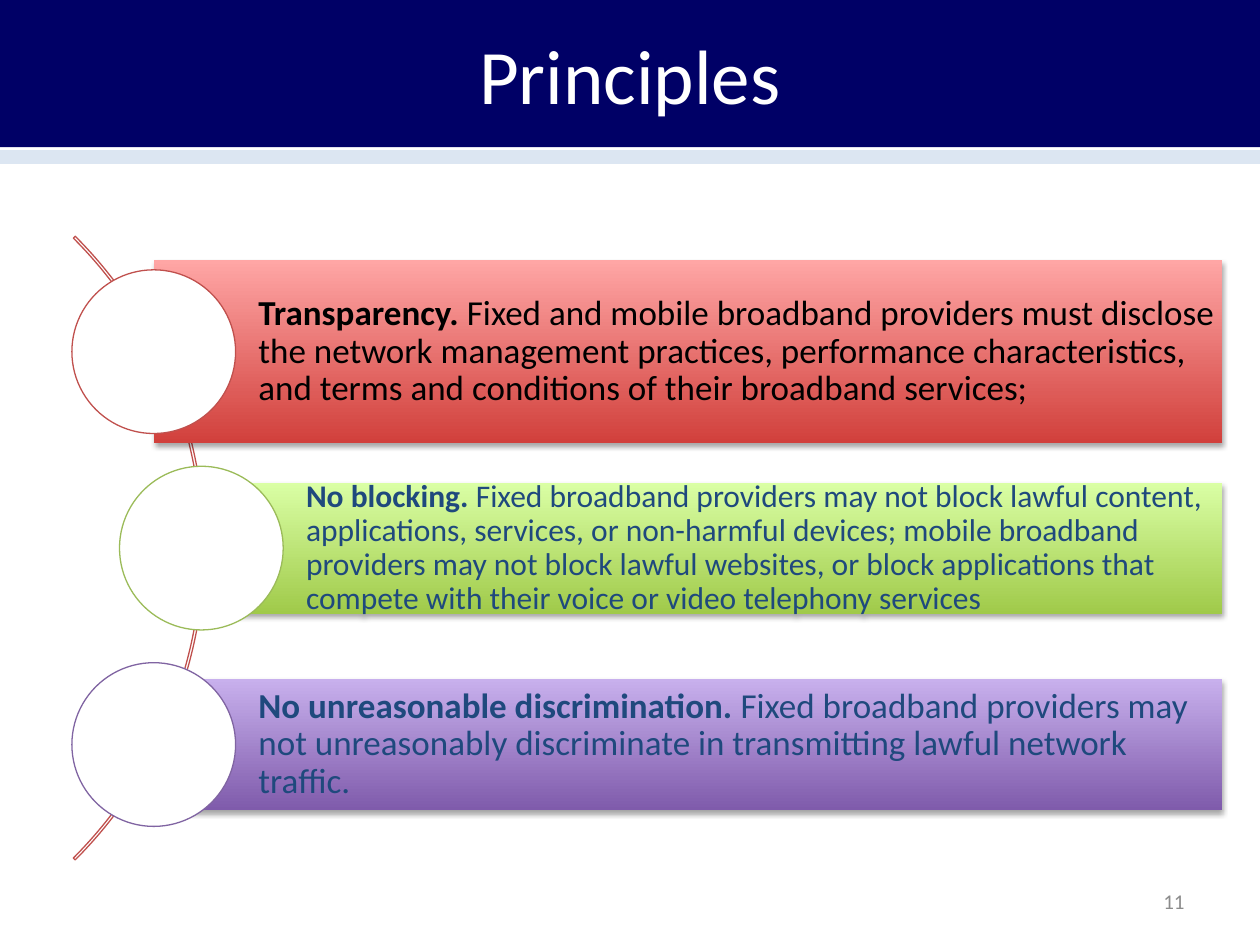
from lxml.etree import SubElement
from pptx import Presentation
from pptx.dml.color import RGBColor
from pptx.enum.shapes import MSO_CONNECTOR, MSO_SHAPE
from pptx.enum.text import MSO_ANCHOR, PP_ALIGN
from pptx.oxml.ns import qn
from pptx.util import Cm, Pt

FONT = "Calibri"
WHITE = RGBColor(0xFF, 0xFF, 0xFF)
BLACK = RGBColor(0x00, 0x00, 0x00)
NAVY = RGBColor(0x00, 0x00, 0x66)
PALE_BLUE = RGBColor(0xDC, 0xE6, 0xF2)
TEXT_BLUE = RGBColor(0x1F, 0x49, 0x7D)
GREY = RGBColor(0x8C, 0x8C, 0x8C)
RED = RGBColor(0xC0, 0x50, 0x4D)
RED_DARK = RGBColor(0xD1, 0x40, 0x3C)
RED_LIGHT = RGBColor(0xFF, 0xA6, 0xA5)
GREEN = RGBColor(0x9B, 0xBB, 0x59)
GREEN_DARK = RGBColor(0xA0, 0xCA, 0x4A)
GREEN_LIGHT = RGBColor(0xDA, 0xFF, 0xA5)
PURPLE = RGBColor(0x80, 0x64, 0xA2)
PURPLE_DARK = RGBColor(0x7F, 0x5B, 0xAB)
PURPLE_LIGHT = RGBColor(0xC8, 0xB0, 0xED)

CIRCLE_SIZE = 3.3
ARC_SIZE = 17.78

# heading, body, size, text colour, outline, dark and light fill, bar height, indent, inset
PRINCIPLES = [
    ("Transparency. ",
     "Fixed and mobile broadband providers must disclose the network management "
     "practices, performance characteristics, and terms and conditions of their "
     "broadband services;",
     20, BLACK, RED, RED_DARK, RED_LIGHT, 3.68, 0, 0.15),
    ("No blocking. ",
     "Fixed broadband providers may not block lawful content, applications, services, "
     "or non-harmful devices; mobile broadband providers may not block lawful websites, "
     "or block applications that compete with their voice or video telephony services",
     18, TEXT_BLUE, GREEN, GREEN_DARK, GREEN_LIGHT, 2.64, 0.96, 0.13),
    ("No unreasonable discrimination. ",
     "Fixed broadband providers may not unreasonably discriminate in transmitting "
     "lawful network traffic.",
     20, TEXT_BLUE, PURPLE, PURPLE_DARK, PURPLE_LIGHT, 2.64, 0, 0.15),
]


def write_text(shape, *runs, size, color, align=PP_ALIGN.LEFT, line_spacing=None,
               insets=(0.25, 0.13, 0.25, 0.13)):
    """Fill the shape with one paragraph of (text, bold) runs; insets are in cm."""
    frame = shape.text_frame
    frame.word_wrap = True
    frame.vertical_anchor = MSO_ANCHOR.MIDDLE
    (frame.margin_left, frame.margin_top,
     frame.margin_right, frame.margin_bottom) = map(Cm, insets)
    paragraph = frame.paragraphs[0]
    paragraph.alignment = align
    if line_spacing:
        paragraph.line_spacing = line_spacing
    for text, bold in runs:
        run = paragraph.add_run()
        run.text = text
        run.font.name = FONT
        run.font.size = Pt(size)
        run.font.bold = bold
        run.font.color.rgb = color


def add_shape(slide, kind, left, top, width, height, fill=None, line=None):
    shape = slide.shapes.add_shape(kind, Cm(left), Cm(top), Cm(width), Cm(height))
    shape.shadow.inherit = False
    if fill is None:
        shape.fill.background()
    else:
        shape.fill.solid()
        shape.fill.fore_color.rgb = fill
    if line is None:
        shape.line.fill.background()
    else:
        shape.line.color.rgb = line
        shape.line.width = Pt(0.75)
    return shape


def add_text_box(slide, left, top, width, height, text, **text_format):
    box = slide.shapes.add_textbox(Cm(left), Cm(top), Cm(width), Cm(height))
    write_text(box, (text, False), **text_format)


def fill_gradient(shape, bottom, top):
    shape.fill.gradient()
    shape.fill.gradient_angle = 90
    for stop, color in zip(shape.fill.gradient_stops, (bottom, top)):
        stop.color.rgb = color


def add_drop_shadow(shape):
    effects = shape._element.spPr.find(qn("a:effectLst"))
    shadow = SubElement(effects, qn("a:outerShdw"), blurRad=str(Pt(3.1)),
                        dist=str(Pt(1.8)), dir="5400000", rotWithShape="0")
    color = SubElement(shadow, qn("a:srgbClr"), val=str(BLACK))
    SubElement(color, qn("a:alpha"), val="35000")


def add_header(slide, left, top, width, height, title):
    add_shape(slide, MSO_SHAPE.RECTANGLE, left, top, width, height, fill=NAVY)
    rule_top = top + height + 0.2
    rule = slide.shapes.add_connector(MSO_CONNECTOR.STRAIGHT, Cm(left), Cm(rule_top),
                                      Cm(left + width), Cm(rule_top))
    rule.line.color.rgb = PALE_BLUE
    rule.line.width = Pt(8)
    SubElement(rule._element.spPr, qn("a:effectLst"))
    add_text_box(slide, left + 1.27, top + 0.1, width - 2.54, height, title,
                 size=44, color=WHITE, align=PP_ALIGN.CENTER)


def add_principle(slide, left, middle, right, principle):
    """Draw a bar that starts at the centre of the circle on its left."""
    (heading, body, size, text_color, outline, dark, light,
     bar_height, indent, inset) = principle
    circle_left = left + indent
    bar_left = circle_left + CIRCLE_SIZE / 2
    bar = add_shape(slide, MSO_SHAPE.RECTANGLE, bar_left, middle - bar_height / 2,
                    right - bar_left, bar_height)
    fill_gradient(bar, dark, light)
    add_drop_shadow(bar)
    write_text(bar, (heading, True), (body, False), size=size, color=text_color,
               line_spacing=0.9, insets=(2.11, inset, inset, inset))
    add_shape(slide, MSO_SHAPE.OVAL, circle_left, middle - CIRCLE_SIZE / 2,
              CIRCLE_SIZE, CIRCLE_SIZE, fill=WHITE, line=outline)


def add_principles(slide, left, top, width, height):
    """Spread the principles evenly along an arc within the box."""
    arc = add_shape(slide, MSO_SHAPE.BLOCK_ARC, left + 2.67 - ARC_SIZE,
                    top + (height - ARC_SIZE) / 2, ARC_SIZE, ARC_SIZE, line=RED)
    for index, value in enumerate((189, 27, 0.003)):
        arc.adjustments[index] = value
    pitch = (height - CIRCLE_SIZE) / (len(PRINCIPLES) - 1)
    for index, principle in enumerate(PRINCIPLES):
        middle = top + CIRCLE_SIZE / 2 + index * pitch
        add_principle(slide, left, middle, left + width, principle)


def main():
    presentation = Presentation()
    presentation.slide_width = Cm(25.4)
    presentation.slide_height = Cm(19.05)
    slide = presentation.slides.add_slide(presentation.slide_layouts[6])
    add_header(slide, 0, -0.2, 25.4, 3.17, "Principles")
    add_principles(slide, 1.45, 5.44, 23.19, 11.22)
    add_text_box(slide, 18.2, 17.66, 5.93, 1.01, "11",
                 size=12, color=GREY, align=PP_ALIGN.RIGHT)
    presentation.save("out.pptx")


if __name__ == "__main__":
    main()
